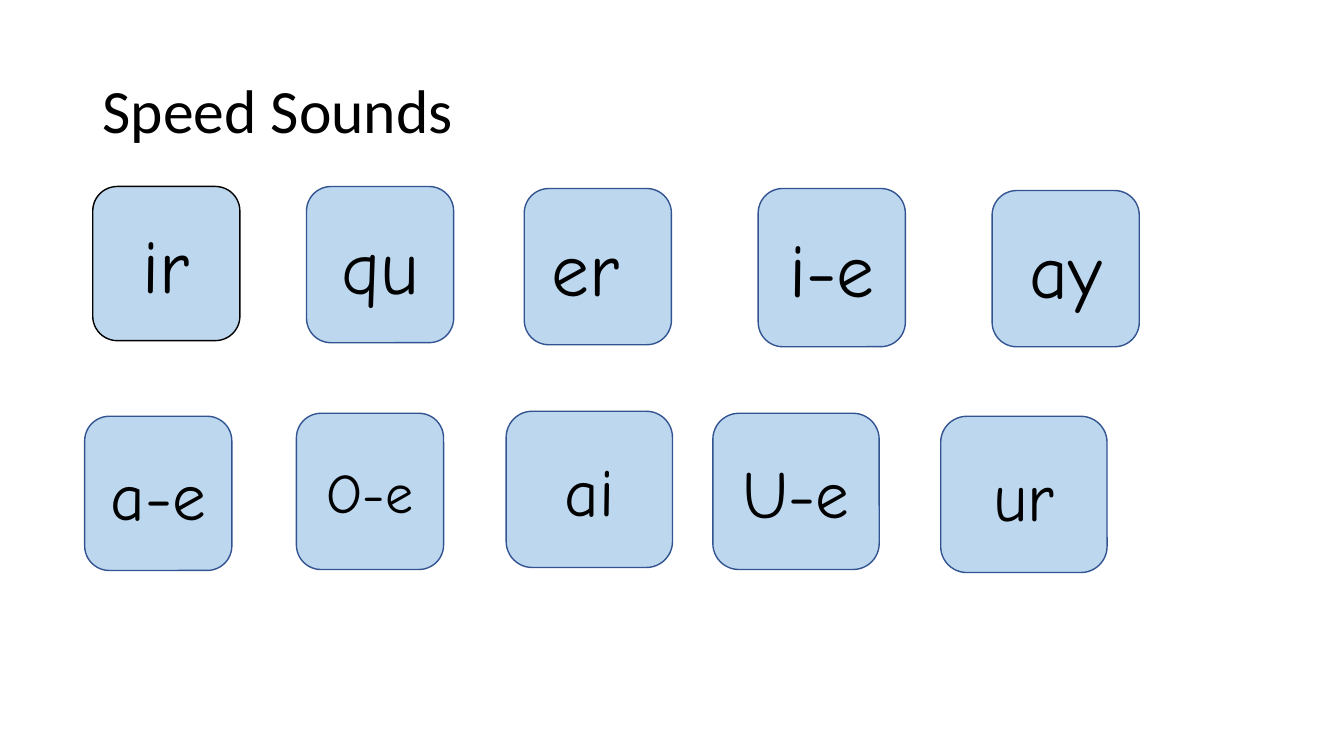
from dataclasses import dataclass

from pptx import Presentation
from pptx.dml.color import RGBColor
from pptx.enum.shapes import MSO_SHAPE as Shape
from pptx.enum.text import MSO_ANCHOR as Anchor, PP_ALIGN as Align
from pptx.util import Inches, Pt

TITLE = "Speed Sounds"
TITLE_AREA = (0.92, 0.4, 11.5, 1.45)

# Each row: top, then cards as (sound, left, drop below row top, width, height)
NARROW, WIDE = 1.46, 1.65
SHORT, MEDIUM, TALL = 1.53, 1.55, 1.57
ROWS = [
    (1.85, [
        ("ir", 0.92, 0, NARROW, SHORT),
        ("qu", 3.04, 0, NARROW, MEDIUM),
        ("er ", 5.2, 0.02, NARROW, MEDIUM),
        ("i-e", 7.52, 0.02, NARROW, TALL),
        ("ay", 9.84, 0.04, NARROW, MEDIUM),
    ]),
    (4.08, [
        ("a-e", 0.84, 0.05, NARROW, SHORT),
        ("O-e", 2.94, 0.02, NARROW, MEDIUM),
        ("ai", 5.02, 0, WIDE, MEDIUM),
        ("U-e", 7.07, 0.02, WIDE, MEDIUM),
        ("ur", 9.33, 0.05, WIDE, MEDIUM),
    ]),
]


@dataclass(frozen=True)
class Theme:
    title_font: str = "Calibri"
    sound_font: str = "Comic Neue"
    ink: RGBColor = RGBColor.from_string("000000")
    card: RGBColor = RGBColor.from_string("BDD7EE")
    edge: RGBColor = RGBColor.from_string("325491")
    title_size: int = 44
    row_sizes: tuple = (54, 48)
    small_size: int = 40


THEME = Theme()


def write(box, text, font, size, align):
    frame = box.text_frame
    frame.word_wrap = True
    frame.vertical_anchor = Anchor.MIDDLE
    para = frame.paragraphs[0]
    para.alignment = align
    span = para.add_run()
    span.text = text
    span.font.name = font
    span.font.size = Pt(size)
    span.font.color.rgb = THEME.ink
    return para


def add_card(page, sound, area, size, edge):
    card = page.shapes.add_shape(Shape.ROUNDED_RECTANGLE, *map(Inches, area))
    card.shadow.inherit = False
    card.fill.solid()
    card.fill.fore_color.rgb = THEME.card
    card.line.color.rgb = edge
    card.line.width = Pt(1)
    write(card, sound, THEME.sound_font, size, Align.CENTER)


def main():
    deck = Presentation()
    deck.slide_width, deck.slide_height = Inches(13.33), Inches(7.5)
    page = deck.slides.add_slide(deck.slide_layouts[6])

    title = page.shapes.add_textbox(*map(Inches, TITLE_AREA))
    para = write(title, TITLE, THEME.title_font, THEME.title_size, Align.LEFT)
    para.line_spacing = 0.9

    for (top, cards), row_size in zip(ROWS, THEME.row_sizes):
        for sound, left, drop, width, height in cards:
            size = THEME.small_size if sound == "O-e" else row_size
            edge = THEME.ink if sound == "ir" else THEME.edge
            add_card(page, sound, (left, top + drop, width, height), size, edge)

    deck.save("out.pptx")


if __name__ == "__main__":
    main()
